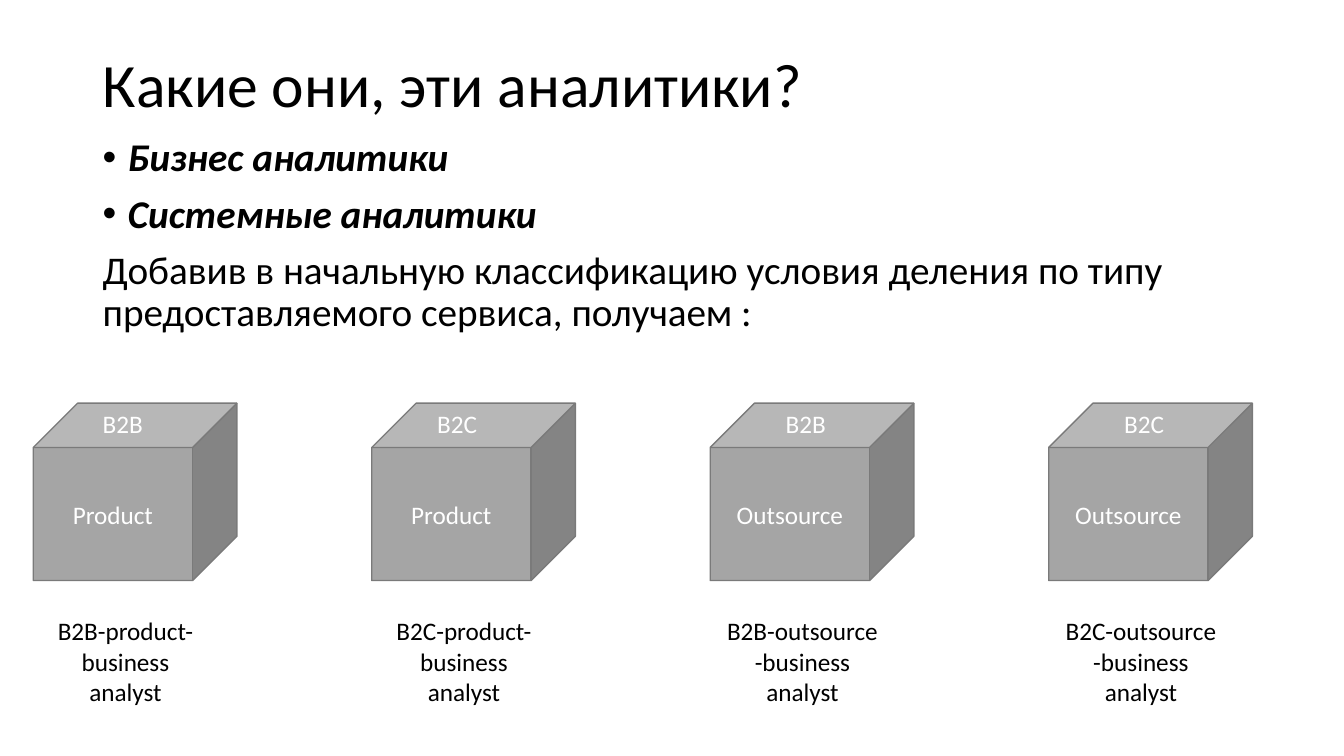
"""Build the slide that sorts analysts by service type and customer."""
from lxml.etree import SubElement
from pptx import Presentation
from pptx.dml.color import RGBColor
from pptx.enum.shapes import MSO_SHAPE
from pptx.enum.text import MSO_ANCHOR, MSO_AUTO_SIZE, PP_ALIGN
from pptx.oxml.ns import qn
from pptx.util import Inches, Pt

TITLE = "Какие они, эти аналитики?"
BULLETS = ["Бизнес аналитики", "Системные аналитики"]
SUMMARY = ("Добавив в начальную классификацию условия деления по типу "
           "предоставляемого сервиса, получаем :")
CUBES = [
    ("B2B", "Product", "B2B-product-business analyst", 0.59),
    ("B2C", "Product", "B2С-product-business analyst", 0.55),
    ("B2B", "Outsource", "B2B-outsource -business analyst", 0.65),
    ("B2C", "Outsource", "B2C-outsource -business analyst", 0.65),
]

FONT = "Calibri"
BLACK, WHITE, GRAY, EDGE = "000000", "FFFFFF", "A5A5A5", "7A7A7A"
WIDTH, HEIGHT = 13.33, 7.5
MARGIN, CONTENT_WIDTH = 0.92, 11.5
FIRST_CUBE, CUBE_STEP = 0.33, 3.357
CUBE_TOP, CAPTION_TOP = 4, 6.06


def color(value):
    return RGBColor.from_string(value)


def box(left, top, width, height):
    return [Inches(length) for length in (left, top, width, height)]


def write(paragraph, text, size=18, ink=BLACK, bold=False, italic=False,
          align=PP_ALIGN.LEFT, line_spacing=1.0, before=0, bullet=False):
    run = paragraph.add_run()
    run.text = text
    run.font.name = FONT
    run.font.size = Pt(size)
    run.font.color.rgb = color(ink)
    run.font.bold = bold
    run.font.italic = italic
    paragraph.alignment = align
    paragraph.line_spacing = line_spacing
    paragraph.space_before = Pt(before)
    if bullet:
        properties = paragraph._p.get_or_add_pPr()
        properties.set("marL", str(Inches(0.25)))
        properties.set("indent", str(-Inches(0.25)))
        SubElement(properties, qn("a:buFont")).set("typeface", "Arial")
        SubElement(properties, qn("a:buChar")).set("char", "•")


def add_text_box(slide, *area):
    frame = slide.shapes.add_textbox(*box(*area)).text_frame
    frame.word_wrap = True
    return frame


def add_title(slide):
    title = slide.shapes.title
    title.left, title.top, title.width, title.height = box(
        MARGIN, 0.42, CONTENT_WIDTH, 0.9)
    frame = title.text_frame
    frame.auto_size = MSO_AUTO_SIZE.NONE
    frame.vertical_anchor = MSO_ANCHOR.MIDDLE
    write(frame.paragraphs[0], TITLE, size=44, line_spacing=0.9)


def add_body(slide):
    frame = add_text_box(slide, MARGIN, 1.32, CONTENT_WIDTH, 5.43)
    style = {"size": 28, "line_spacing": 0.9, "before": 10}
    paragraph = frame.paragraphs[0]
    for text in BULLETS:
        write(paragraph, text, bold=True, italic=True, bullet=True, **style)
        paragraph = frame.add_paragraph()
    write(paragraph, SUMMARY, **style)


def add_cube(slide, left, customer, service, caption, label_offset):
    cube = slide.shapes.add_shape(MSO_SHAPE.CUBE, *box(left, CUBE_TOP, 2.02, 1.76))
    cube.shadow.inherit = False
    cube.fill.solid()
    cube.fill.fore_color.rgb = color(GRAY)
    cube.line.color.rgb = color(EDGE)
    cube.line.width = Pt(1)
    cube.text_frame.vertical_anchor = MSO_ANCHOR.MIDDLE
    write(cube.text_frame.paragraphs[0], service, ink=WHITE, align=PP_ALIGN.CENTER)
    caption_frame = add_text_box(slide, left, CAPTION_TOP, 1.83, 1.01)
    write(caption_frame.paragraphs[0], caption, align=PP_ALIGN.CENTER)
    label_frame = add_text_box(slide, left + label_offset, CUBE_TOP, 0.72, 0.4)
    write(label_frame.paragraphs[0], customer, ink=WHITE)


def main():
    presentation = Presentation()
    presentation.slide_width, presentation.slide_height = Inches(WIDTH), Inches(HEIGHT)
    slide = presentation.slides.add_slide(presentation.slide_layouts[5])
    add_title(slide)
    add_body(slide)
    for index, cube in enumerate(CUBES):
        add_cube(slide, FIRST_CUBE + index * CUBE_STEP, *cube)
    presentation.save("out.pptx")


if __name__ == "__main__":
    main()
